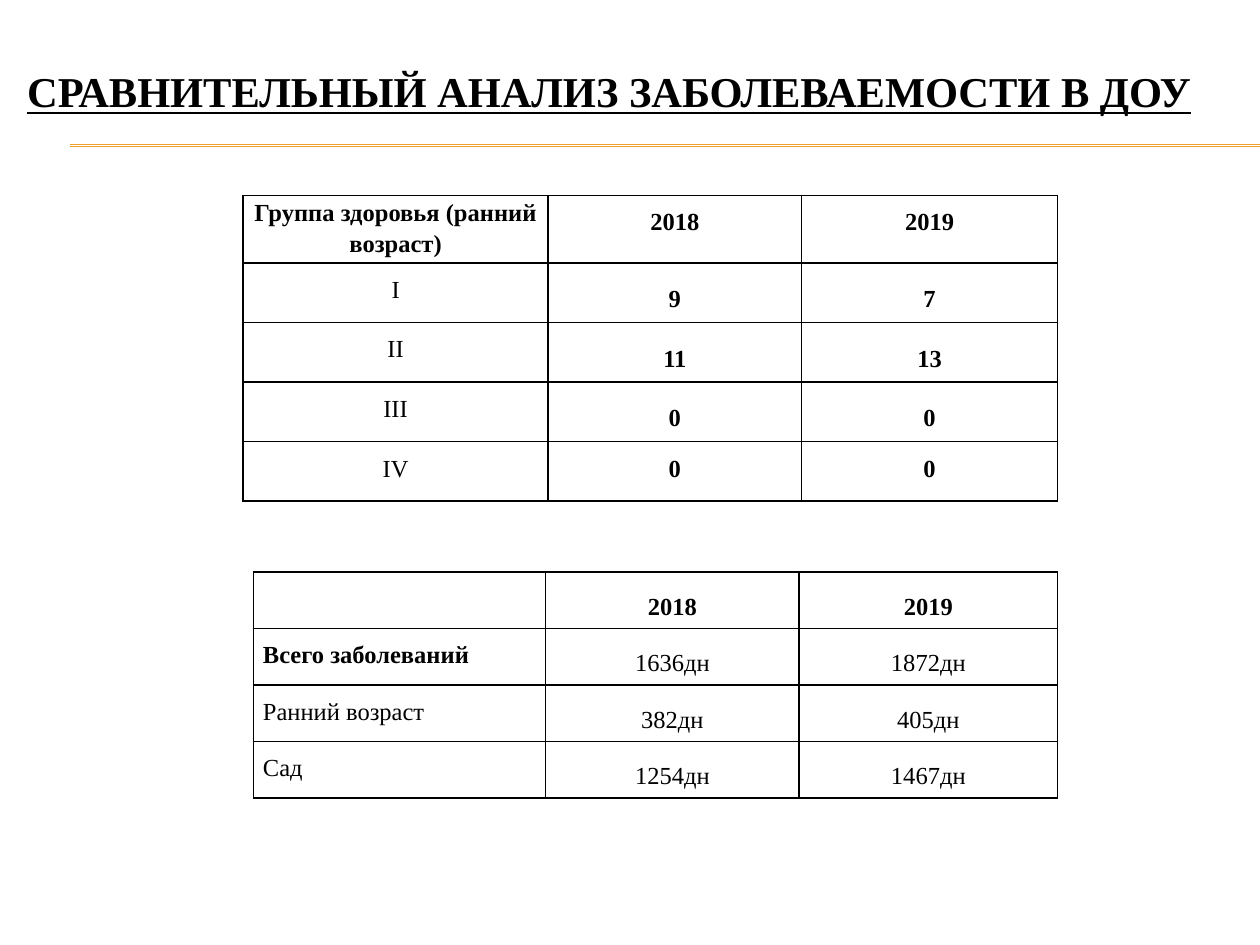
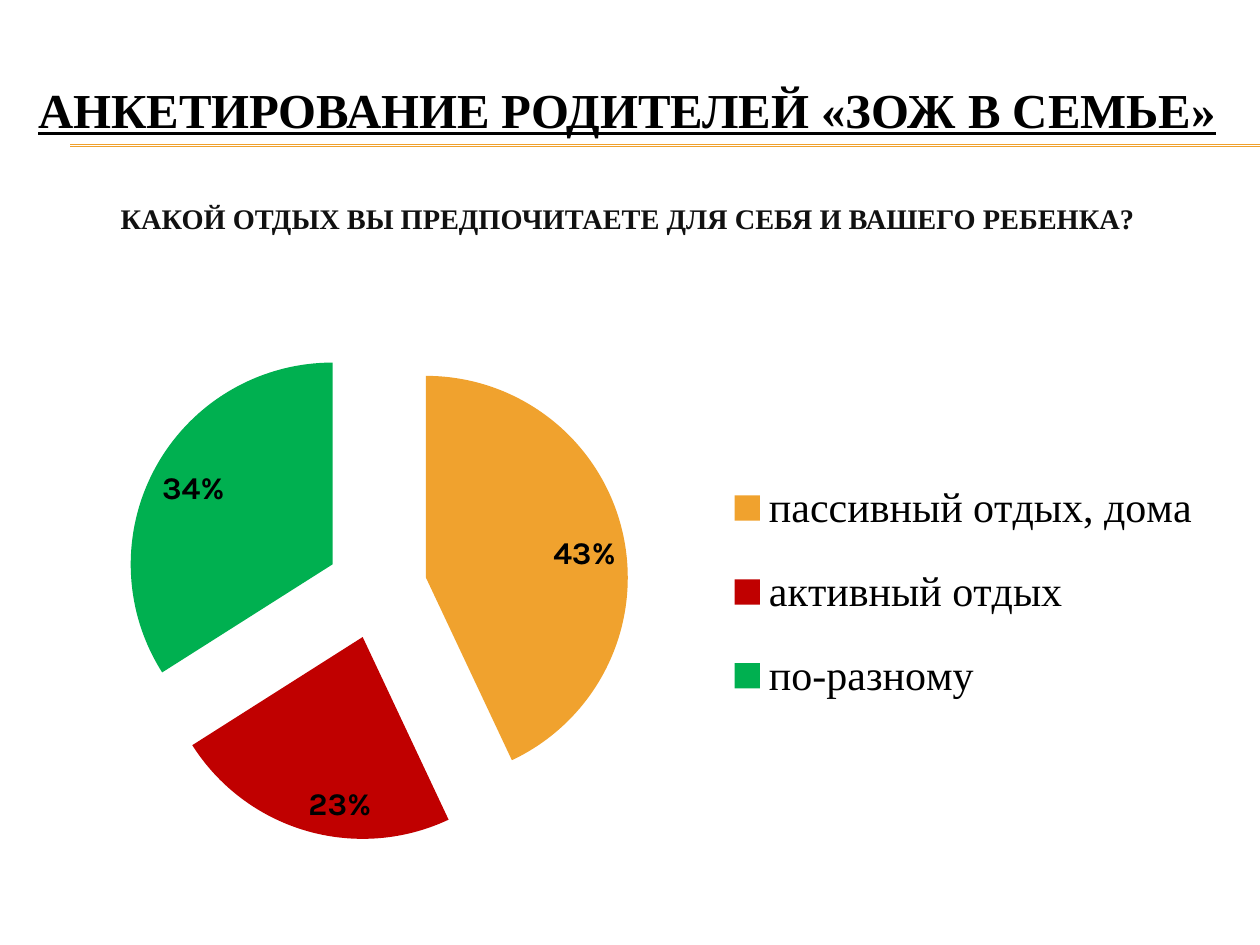
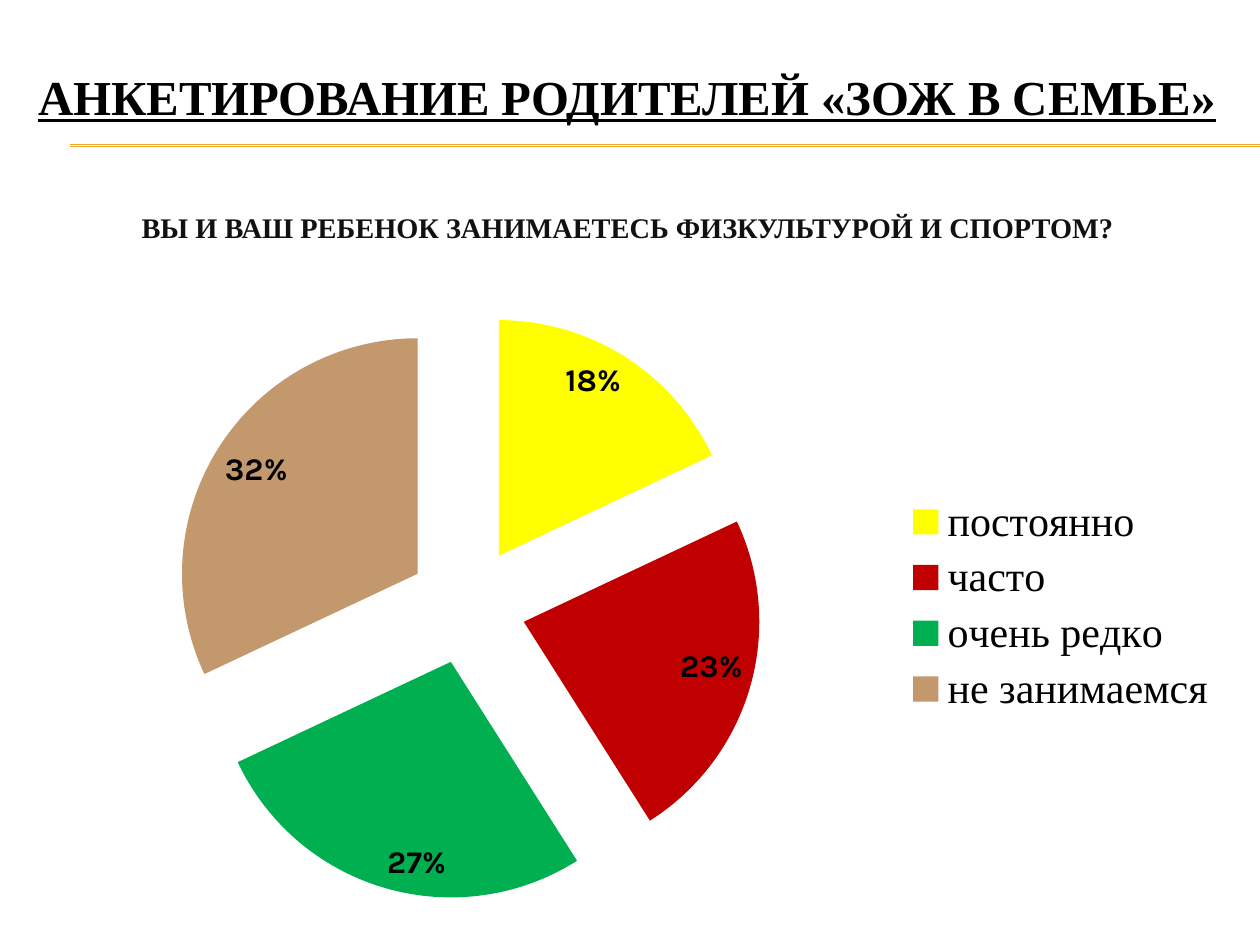
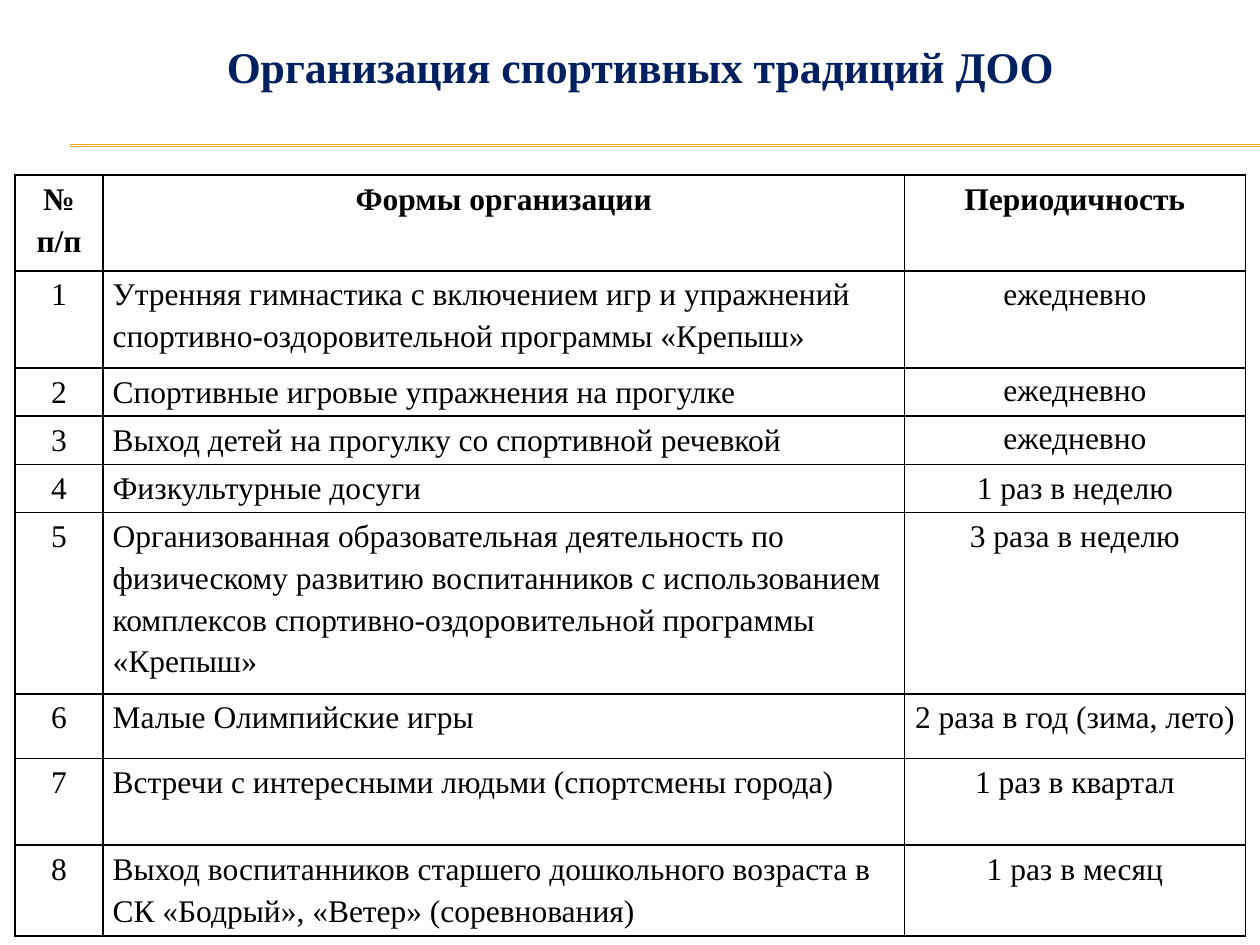
from dataclasses import dataclass

from pptx import Presentation
from pptx.chart.data import CategoryChartData
from pptx.dml.color import RGBColor
from pptx.enum.chart import XL_CHART_TYPE, XL_LABEL_POSITION, XL_LEGEND_POSITION
from pptx.enum.shapes import MSO_CONNECTOR
from pptx.enum.text import MSO_ANCHOR, PP_ALIGN
from pptx.oxml.ns import qn
from pptx.oxml.xmlchemy import OxmlElement
from pptx.util import Cm, Pt

PIE = XL_CHART_TYPE.PIE
INSIDE = XL_LABEL_POSITION.INSIDE_END
RIGHT = XL_LEGEND_POSITION.RIGHT
STRAIGHT = MSO_CONNECTOR.STRAIGHT
TOP, MIDDLE = MSO_ANCHOR.TOP, MSO_ANCHOR.MIDDLE
LEFT, CENTER, JUSTIFY = PP_ALIGN.LEFT, PP_ALIGN.CENTER, PP_ALIGN.JUSTIFY


@dataclass(frozen=True)
class Theme:
    serif: str = "Times New Roman"
    sans: str = "Karla"
    black: str = "000000"
    ink: str = "111111"
    navy: str = "002060"
    orange: str = "F0A22E"
    red: str = "C00000"
    green: str = "00B050"
    yellow: str = "FFFF00"
    tan: str = "C3986D"
    report: float = 24.3
    survey: float = 27.9
    plan: float = 25
    query: float = 16.2
    small: float = 14
    body: float = 18
    label: float = 18
    legend: float = 24


THEME = Theme()


@dataclass(frozen=True)
class Box:
    left: float
    top: float
    width: float
    height: float

    def lengths(self) -> tuple:
        return Cm(self.left), Cm(self.top), Cm(self.width), Cm(self.height)


@dataclass(frozen=True)
class Line:
    text: str
    size: float
    color: str = THEME.black
    under: bool = False
    gap: float = 0


@dataclass(frozen=True)
class Look:
    bold: bool = False
    align: PP_ALIGN = CENTER
    space: float = 1.5
    anchor: MSO_ANCHOR = TOP
    after: float = 0


@dataclass(frozen=True)
class Row:
    height: float
    texts: tuple
    looks: tuple


@dataclass(frozen=True)
class Slice:
    name: str
    value: float
    color: str


def style(font, size: float, color: str, bold: bool = False, name: str = THEME.serif) -> None:
    font.name = name
    font.size = Pt(size)
    font.bold = bold
    font.color.rgb = RGBColor.from_string(color)


def draw_rules(slide) -> None:
    for top in (2.92, 2.95):
        rule = slide.shapes.add_connector(STRAIGHT, Cm(1.42), Cm(top), Cm(25.4), Cm(top))
        rule.line.color.rgb = RGBColor.from_string(THEME.orange)
        rule.line.width = Pt(0.75)
        rule._element.spPr.append(OxmlElement("a:effectLst"))


def draw_title(slide, box: Box, pad: float, lines: list[Line], align: PP_ALIGN = CENTER) -> None:
    frame = slide.shapes.add_textbox(*box.lengths()).text_frame
    frame.word_wrap = True
    frame.vertical_anchor = TOP
    frame.margin_top = Cm(pad)
    frame.margin_bottom = 0
    for i, line in enumerate(lines):
        para = frame.add_paragraph() if i else frame.paragraphs[0]
        para.text = line.text
        para.alignment = align
        para.space_before = Pt(line.gap)
        style(para.font, line.size, line.color, True)
        para.font.underline = line.under


def draw_edges(cell) -> None:
    props = cell._tc.get_or_add_tcPr()
    for i, side in enumerate(("a:lnL", "a:lnR", "a:lnT", "a:lnB")):
        edge = OxmlElement(side)
        edge.set("w", str(Pt(1)))
        fill = OxmlElement("a:solidFill")
        color = OxmlElement("a:srgbClr")
        color.set("val", THEME.black)
        fill.append(color)
        edge.append(fill)
        props.insert(i, edge)


def fill_cell(cell, text: str, look: Look, size: float) -> None:
    cell.fill.background()
    draw_edges(cell)
    cell.margin_left = cell.margin_right = Cm(0.19)
    cell.margin_top = cell.margin_bottom = 0
    cell.vertical_anchor = look.anchor
    para = cell.text_frame.paragraphs[0]
    para.text = text
    para.alignment = look.align
    para.line_spacing = look.space
    para.space_after = Pt(look.after)
    style(para.font, size, THEME.black, look.bold)


def draw_table(slide, left: float, top: float, widths: tuple, rows: list[Row], size: float) -> None:
    box = Box(left, top, sum(widths), sum(row.height for row in rows))
    table = slide.shapes.add_table(len(rows), len(widths), *box.lengths()).table
    table.first_row = table.horz_banding = False
    for col, width in zip(table.columns, widths):
        col.width = Cm(width)
    for r, row in enumerate(rows):
        table.rows[r].height = Cm(row.height)
        for c, (text, look) in enumerate(zip(row.texts, row.looks)):
            fill_cell(table.cell(r, c), text, look, size)


def make_layout(area: tuple, inner: bool = False):
    layout = OxmlElement("c:layout")
    manual = OxmlElement("c:manualLayout")
    layout.append(manual)
    pairs = [("layoutTarget", "inner")] if inner else []
    pairs += [("xMode", "edge"), ("yMode", "edge"), *zip("xywh", area)]
    for tag, value in pairs:
        node = OxmlElement(f"c:{tag}")
        node.set("val", str(value))
        manual.append(node)
    return layout


def drop_layout(node) -> None:
    for old in node.findall(qn("c:layout")):
        node.remove(old)


def draw_pie(slide, box: Box, parts: list[Slice], area: tuple = (), key: tuple = ()) -> None:
    data = CategoryChartData(number_format="0%")
    data.categories = [part.name for part in parts]
    data.add_series("Series 1", [part.value for part in parts])
    chart = slide.shapes.add_chart(PIE, *box.lengths(), data).chart
    chart.has_title = False
    style(chart.font, 10, THEME.black, name=THEME.sans)

    chart.has_legend = True
    legend = chart.legend
    legend.position = RIGHT
    legend.include_in_layout = False
    style(legend.font, THEME.legend, THEME.black)

    plot = chart.plots[0]
    plot.vary_by_categories = True
    series = plot.series[0]
    burst = OxmlElement("c:explosion")
    burst.set("val", "25")
    series._element.find(qn("c:tx")).addnext(burst)
    for i, part in enumerate(parts):
        fill = series.points[i].format.fill
        fill.solid()
        fill.fore_color.rgb = RGBColor.from_string(part.color)

    labels = series.data_labels
    labels.show_value = True
    labels.number_format = "0%"
    labels.number_format_is_linked = False
    labels.position = INSIDE
    style(labels.font, THEME.label, THEME.black, True, THEME.sans)

    if area:
        region = plot._element.getparent()
        drop_layout(region)
        region.insert(0, make_layout(area, True))
    if key:
        node = legend._element
        drop_layout(node)
        node.find(qn("c:overlay")).addprevious(make_layout(key))


def add_slide(deck):
    slide = deck.slides.add_slide(deck.slide_layouts[6])
    draw_rules(slide)
    return slide


def build_health(deck) -> None:
    slide = add_slide(deck)
    title = Line("СРАВНИТЕЛЬНЫЙ АНАЛИЗ ЗАБОЛЕВАЕМОСТИ В ДОУ", THEME.report, under=True)
    draw_title(slide, Box(0.3, 1.27, 24.69, 2.34), 0.05, [title], LEFT)

    plain, strong = Look(), Look(bold=True)
    count = Look(bold=True, anchor=MIDDLE, after=10)
    groups = [
        Row(1.27, ("Группа здоровья (ранний возраст)", "2018", "2019"),
            (Look(bold=True, space=1.15), strong, strong)),
        *(Row(1.2, texts, (plain, count, count))
          for texts in (("I", "9", "7"), ("II", "11", "13"), ("III", "0", "0"))),
        Row(1.2, ("IV", "0", "0"), (plain, strong, strong)),
    ]
    draw_table(slide, 4.9, 3.94, (6.15, 5.11, 5.16), groups, THEME.small)

    head, days = Look(bold=True, anchor=MIDDLE), Look(anchor=MIDDLE)
    name, total = Look(align=JUSTIFY), Look(bold=True, align=JUSTIFY)
    cases = [
        Row(1.14, ("", "2018", "2019"), (name, head, head)),
        Row(1.14, ("Всего заболеваний", "1636дн", "1872дн"), (total, days, days)),
        Row(1.14, ("Ранний возраст", "382дн", "405дн"), (name, days, days)),
        Row(1.14, ("Сад", "1254дн", "1467дн"), (name, days, days)),
    ]
    draw_table(slide, 5.11, 11.53, (5.89, 5.11, 5.21), cases, THEME.small)


def add_survey(deck, box: Box, pad: float, query: str, gap: float):
    slide = add_slide(deck)
    draw_title(slide, box, pad, [
        Line("АНКЕТИРОВАНИЕ РОДИТЕЛЕЙ «ЗОЖ В СЕМЬЕ»", THEME.survey, under=True),
        Line(query, THEME.query, THEME.ink, gap=gap),
    ])
    return slide


def build_rest(deck) -> None:
    slide = add_survey(deck, Box(0.3, 1.57, 24.69, 3.76), 0.03,
                       "КАКОЙ ОТДЫХ ВЫ ПРЕДПОЧИТАЕТЕ ДЛЯ СЕБЯ И ВАШЕГО РЕБЕНКА?", 36)
    draw_pie(slide, Box(0.84, 5.33, 24.13, 13.21), [
        Slice("пассивный отдых, дома", 0.43, THEME.orange),
        Slice("активный отдых", 0.23, THEME.red),
        Slice("по-разному", 0.34, THEME.green),
    ], area=(0.02, 0.11, 0.52, 0.77), key=(0.56, 0.28, 0.42, 0.44))


def build_sport(deck) -> None:
    slide = add_survey(deck, Box(0.3, 0.53, 24.69, 4.6), 0.81,
                       "ВЫ И ВАШ РЕБЕНОК ЗАНИМАЕТЕСЬ ФИЗКУЛЬТУРОЙ И СПОРТОМ?", 48.5)
    draw_pie(slide, Box(0.71, 5.92, 24.13, 12.57), [
        Slice("постоянно", 0.18, THEME.yellow),
        Slice("часто", 0.23, THEME.red),
        Slice("очень редко", 0.27, THEME.green),
        Slice("не занимаемся", 0.32, THEME.tan),
    ])


def build_plan(deck) -> None:
    slide = add_slide(deck)
    title = Line("Организация спортивных традиций ДОО", THEME.plan, THEME.navy)
    draw_title(slide, Box(0.84, 0.33, 24.13, 1.8), 0.48, [title])

    head, mid, form = Look(bold=True, space=1.2), Look(space=1.2), Look(align=LEFT, space=1.2)
    tight = Look(space=1.15)
    forms = [
        (1.96, "Утренняя гимнастика с включением игр и упражнений "
               "спортивно-оздоровительной программы «Крепыш»", "ежедневно", mid),
        (0.97, "Спортивные игровые упражнения на прогулке", "ежедневно", tight),
        (0.97, "Выход детей на прогулку со спортивной речевкой", "ежедневно", tight),
        (0.97, "Физкультурные досуги", "1 раз в неделю", mid),
        (3.58, "Организованная образовательная деятельность по физическому развитию "
               "воспитанников с использованием комплексов спортивно-оздоровительной "
               "программы «Крепыш»", "3 раза в неделю", mid),
        (1.3, "Малые Олимпийские игры", "2 раза в год (зима, лето)", mid),
        (1.75, "Встречи с интересными людьми (спортсмены города)", "1 раз в квартал", mid),
        (1.75, "Выход воспитанников старшего дошкольного возраста в "
               "СК «Бодрый», «Ветер» (соревнования)", "1 раз в месяц", mid),
    ]
    rows = [Row(1.93, ("№ п/п", "Формы организации", "Периодичность"), (head,) * 3)]
    rows += [Row(height, (str(i), text, term), (mid, form, look))
             for i, (height, text, term, look) in enumerate(forms, 1)]
    draw_table(slide, 0.3, 3.53, (1.78, 16.15, 6.88), rows, THEME.body)


def main() -> None:
    deck = Presentation()
    deck.slide_width, deck.slide_height = Cm(25.4), Cm(19.05)
    for build in (build_health, build_rest, build_sport, build_plan):
        build(deck)
    deck.save("out.pptx")


if __name__ == "__main__":
    main()
